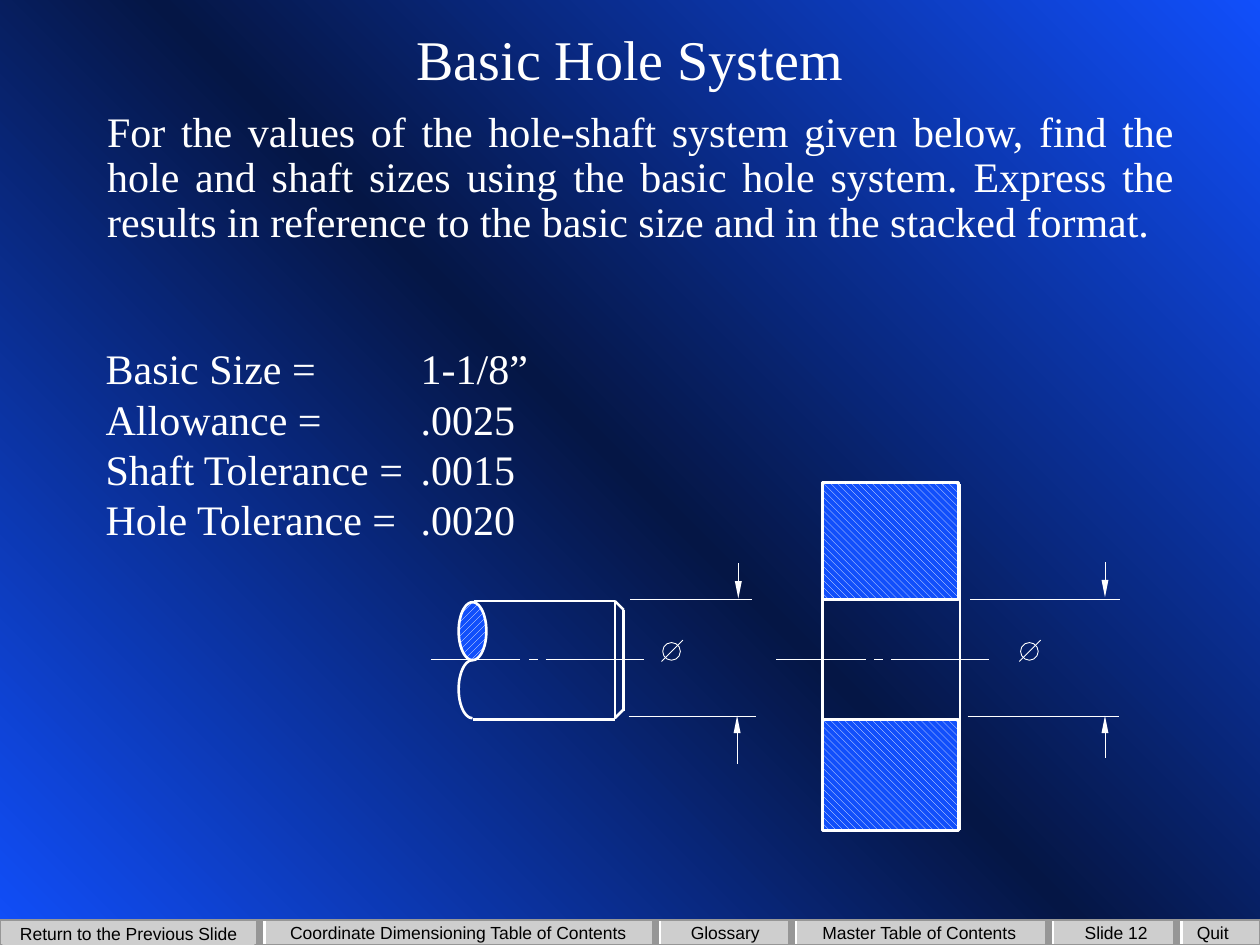
from copy import deepcopy
from math import cos, radians, sin

from pptx import Presentation
from pptx.dml.color import RGBColor
from pptx.enum.dml import MSO_PATTERN as Pattern
from pptx.enum.shapes import MSO_CONNECTOR as Connector, MSO_SHAPE as Shape
from pptx.enum.text import MSO_ANCHOR as Anchor, MSO_AUTO_SIZE as AutoSize, PP_ALIGN as Align
from pptx.oxml.ns import qn
from pptx.util import Inches, Pt

WHITE = RGBColor(0xFF, 0xFF, 0xFF)
BLACK = RGBColor(0x00, 0x00, 0x00)
BLUE = RGBColor(0x11, 0x4F, 0xFB)
NAVY = RGBColor(0x05, 0x16, 0x45)
SILVER = RGBColor(0xCE, 0xCE, 0xCE)
GRAY = RGBColor(0x96, 0x96, 0x96)

THICK, THIN = 1.5, 0.5


class Drawing:
    """The current slide and its style; shapes go to the current group."""
    serif = "Times New Roman"
    sans = "Arial"

    def __init__(self, slide):
        self.slide = slide
        self.shapes = slide.shapes

    def start_group(self):
        self.shapes = self.slide.shapes.add_group_shape().shapes

    def end_group(self):
        self.shapes = self.slide.shapes

    def background(self, edge, middle):
        fill = self.slide.background.fill
        fill.gradient()
        fill.gradient_angle = 45
        stops = self.slide.element.find(".//" + qn("a:gsLst"))
        stops.insert(1, deepcopy(stops[0]))
        for stop, color, position in zip(fill.gradient_stops, (edge, middle, edge), (0, 0.5, 1)):
            stop.color.rgb = color
            stop.position = position

    def font(self, paragraph, name, size, color):
        paragraph.font.name = name
        paragraph.font.size = Pt(size)
        paragraph.font.color.rgb = color

    def placeholder(self, shape, box, text, size, align, anchor, spacing=None):
        shape.left, shape.top, shape.width, shape.height = map(Inches, box)
        frame = shape.text_frame
        frame.text = text
        frame.auto_size = AutoSize.NONE
        frame.vertical_anchor = anchor
        paragraph = frame.paragraphs[0]
        properties = paragraph._p.get_or_add_pPr()
        properties.set("marL", "0")
        properties.set("indent", "0")
        properties.insert(0, properties.makeelement(qn("a:buNone"), {}))
        paragraph.alignment = align
        paragraph.space_before = Pt(0)
        paragraph.line_spacing = spacing
        self.font(paragraph, self.serif, size, WHITE)

    def tabbed_list(self, box, rows, size, tab):
        frame = self.shapes.add_textbox(*map(Inches, box)).text_frame
        frame.word_wrap = True
        frame.auto_size = AutoSize.SHAPE_TO_FIT_TEXT
        frame.text = "\n".join("\t".join(row) for row in rows)
        for paragraph in frame.paragraphs:
            properties = paragraph._p.get_or_add_pPr()
            stops = properties.makeelement(qn("a:tabLst"), {})
            stops.append(stops.makeelement(qn("a:tab"), {"pos": str(Inches(tab)), "algn": "l"}))
            properties.append(stops)
            self.font(paragraph, self.serif, size, WHITE)

    def label(self, box, text, fill=None, align=Align.LEFT):
        if fill is None:
            shape = self.shapes.add_textbox(*map(Inches, box))
        else:
            shape = self.block(box, fill)
        frame = shape.text_frame
        frame.word_wrap = False
        frame.vertical_anchor = Anchor.MIDDLE
        frame.text = text
        frame.paragraphs[0].alignment = align
        self.font(frame.paragraphs[0], self.sans, 10, BLACK)

    def outline(self, shape, color, width):
        if color is None:
            shape.line.fill.background()
        else:
            shape.line.color.rgb = color
            shape.line.width = Pt(width)

    def paint(self, shape, fill=None, hatch=None):
        shape.shadow.inherit = False
        if hatch is not None:
            shape.fill.patterned()
            shape.fill.pattern = hatch
            shape.fill.fore_color.rgb = WHITE
            shape.fill.back_color.rgb = BLUE
        elif fill is not None:
            shape.fill.solid()
            shape.fill.fore_color.rgb = fill
        else:
            shape.fill.background()

    def block(self, box, fill=None, line=None, width=THICK, hatch=None, kind=Shape.RECTANGLE):
        shape = self.shapes.add_shape(kind, *map(Inches, box))
        self.paint(shape, fill, hatch)
        self.outline(shape, line, width)
        return shape

    def arc(self, center, radii, start, end, hatch=None):
        points = [(Inches(center[0] + radii[0] * cos(radians(angle))),
                   Inches(center[1] + radii[1] * sin(radians(angle))))
                  for angle in range(start, end + 1, 5)]
        builder = self.shapes.build_freeform(*points[0])
        builder.add_line_segments(points[1:], close=hatch is not None)
        shape = builder.convert_to_shape()
        self.paint(shape, hatch=hatch)
        self.outline(shape, WHITE, THICK)

    def line(self, x1, y1, x2, y2, width=THICK, color=WHITE, arrow=False):
        connector = self.shapes.add_connector(Connector.STRAIGHT, *map(Inches, (x1, y1, x2, y2)))
        self.outline(connector, color, width)
        if arrow:
            line = connector.line._get_or_add_ln()
            line.append(line.makeelement(
                qn("a:headEnd"), {"type": "triangle", "w": "sm", "len": "lg"}))
        properties = connector._element.spPr
        properties.append(properties.makeelement(qn("a:effectLst"), {}))

    def diameter(self, left):
        self.start_group()
        self.block((left, 5.1, 0.14, 0.14), line=WHITE, width=THIN, kind=Shape.OVAL)
        self.line(left + 0.16, 5.08, left - 0.01, 5.25, THIN)
        self.end_group()


def navigation_bar(drawing):
    drawing.block((0, 7.3, 10, 0.2), SILVER, GRAY, 1.25)
    for left, width, text in ((0.02, 2, "Return to the Previous Slide"),
                              (2.12, 3.03, "Coordinate Dimensioning Table of Contents"),
                              (5.26, 0.99, "Glossary"),
                              (6.47, 1.65, "Master Table of Contents")):
        top = 7.32 if left < 1 else 7.31
        drawing.label((left, top, width, 0.18), text, SILVER, Align.CENTER)
    drawing.label((8.51, 7.31, 0.75, 0.18), "Slide 12")
    drawing.label((9.4, 7.31, 0.5, 0.18), "Quit")
    for x in (2.08, 5.22, 6.3, 8.34, 9.36):
        drawing.line(x, 7.49, x, 7.31, 4, WHITE)
        drawing.line(x - 0.02, 7.49, x - 0.02, 7.31, 4, GRAY)


def hole_and_shaft(drawing):
    drawing.start_group()
    # Shaft
    drawing.arc((3.75, 5.47), (0.11, 0.23), 90, 270)
    drawing.arc((3.75, 5.01), (0.11, 0.23), 0, 355, Pattern.WIDE_UPWARD_DIAGONAL)
    for ends in ((3.76, 4.77, 4.88, 4.77), (3.75, 5.71, 4.88, 5.71), (4.88, 4.77, 4.88, 5.71),
                 (4.88, 4.77, 4.95, 4.84), (4.95, 4.84, 4.95, 5.64), (4.88, 5.7, 4.95, 5.63)):
        drawing.line(*ends)
    # Hole: sides and hatched sections
    for x in (6.53, 7.62):
        drawing.line(x, 3.84, x, 6.59)
    for top, height in ((3.83, 0.93), (5.71, 0.88)):
        drawing.block((6.53, top, 1.08, height), line=WHITE, hatch=Pattern.WIDE_DOWNWARD_DIAGONAL)
    # Center lines
    for left in (3.42, 6.16):
        for start, end in ((0, 0.71), (0.78, 0.85), (0.91, 1.69)):
            drawing.line(left + start, 5.23, left + end, 5.23, THIN)
    # Extension lines
    for x1, x2, y in ((5, 5.97, 4.76), (4.99, 6, 5.69), (7.7, 8.89, 4.76), (7.68, 8.88, 5.69)):
        drawing.line(x1, y, x2, y, THIN)
    # Dimension arrows
    for x, tip, tail in ((5.86, 4.75, 4.47), (5.85, 5.68, 6.06),
                         (8.77, 4.74, 4.46), (8.77, 5.68, 6.02)):
        drawing.line(x, tip, x, tail, THIN, arrow=True)
    drawing.end_group()
    for left in (5.26, 8.1):
        drawing.diameter(left)


def main():
    presentation = Presentation()
    presentation.slide_width, presentation.slide_height = Inches(10), Inches(7.5)
    slide = presentation.slides.add_slide(presentation.slide_layouts[1])
    drawing = Drawing(slide)
    drawing.background(BLUE, NAVY)
    navigation_bar(drawing)
    hole_and_shaft(drawing)
    # Title, task and given values
    drawing.placeholder(slide.shapes.title, (0.75, 0.17, 8.5, 0.58), "Basic Hole System",
                        32, Align.CENTER, Anchor.MIDDLE)
    drawing.placeholder(slide.placeholders[1], (0.75, 0.83, 8.67, 1.25),
                        "For the values of the hole-shaft system given below, find the hole and "
                        "shaft sizes using the basic hole system. Express the results in "
                        "reference to the basic size and in the stacked format.",
                        24, Align.JUSTIFY, Anchor.TOP, 0.9)
    drawing.tabbed_list((0.74, 2.67, 3.59, 1.72),
                        (("Basic Size =", "1-1/8”"), ("Allowance =", ".0025"),
                         ("Shaft Tolerance =", ".0015"), ("Hole Tolerance =", ".0020")), 24, 2.5)
    presentation.save("out.pptx")


if __name__ == "__main__":
    main()
